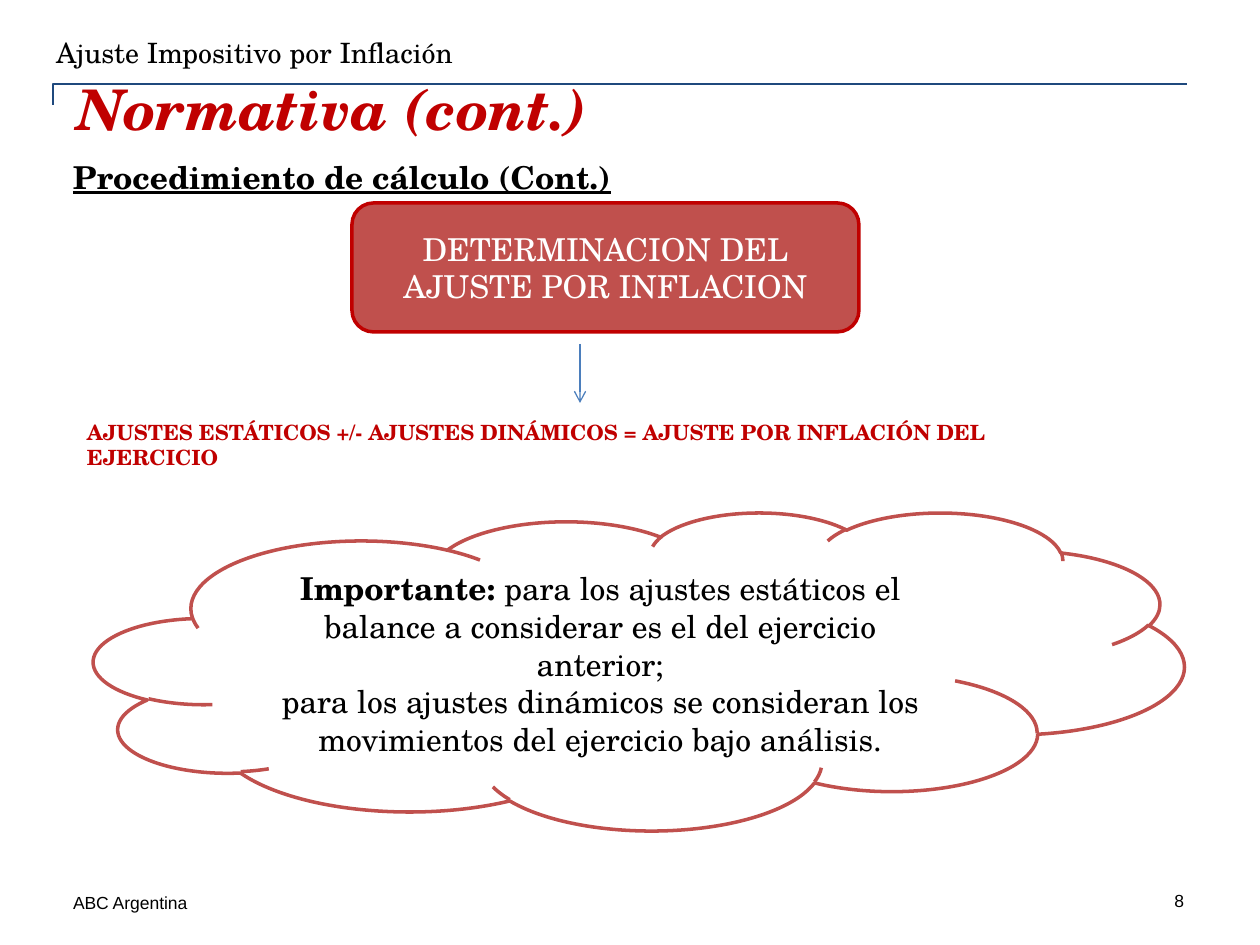
from lxml import etree
from pptx import Presentation
from pptx.dml.color import RGBColor
from pptx.enum import shapes, text
from pptx.oxml.ns import qn
from pptx.util import Emu, Pt

PX = 914400 / 126  # EMU in one px
SERIF, SANS = "TeX Gyre Schola", "Arial"
INSET = (13, 6, 13, 6)
COLOURS = {
    "black": "000000",
    "white": "FFFFFF",
    "red": "C00000",
    "brick": "C0504D",
    "navy": "1F497D",
    "blue": "4B7EBC",
}


def px(length):
    return Emu(round(length * PX))


def colour(name):
    return RGBColor.from_string(COLOURS[name])


def add_run(paragraph, words, size, name="black", font=SERIF, bold=False,
            italic=False, underline=False):
    run = paragraph.add_run()
    run.text = words
    run.font.name = font
    run.font.size = Pt(size)
    run.font.bold = bold
    run.font.italic = italic
    run.font.underline = underline
    run.font.color.rgb = colour(name)


def set_frame(shape, anchor=text.MSO_ANCHOR.TOP, align=text.PP_ALIGN.LEFT,
              inset=INSET, wrap=True):
    """Format the text frame and return its first paragraph."""
    frame = shape.text_frame
    frame.word_wrap = wrap
    frame.auto_size = text.MSO_AUTO_SIZE.NONE
    frame.vertical_anchor = anchor
    (frame.margin_left, frame.margin_top,
     frame.margin_right, frame.margin_bottom) = map(px, inset)
    paragraph = frame.paragraphs[0]
    paragraph.alignment = align
    return paragraph


def add_label(slide, box, words, size, name="black", font=SERIF, bold=False,
              underline=False, **frame):
    shape = slide.shapes.add_textbox(*map(px, box))
    add_run(set_frame(shape, **frame), words, size, name, font, bold,
            underline=underline)


def add_panel(slide, kind, box, fill, line):
    """Add an outlined shape and return its first, centred paragraph."""
    shape = slide.shapes.add_shape(kind, *map(px, box))
    shape.shadow.inherit = False
    shape.fill.solid()
    shape.fill.fore_color.rgb = colour(fill)
    shape.line.color.rgb = colour(line)
    shape.line.width = Pt(2)
    return set_frame(shape, text.MSO_ANCHOR.MIDDLE, text.PP_ALIGN.CENTER)


def add_header(slide, box):
    left, top, width, height = box
    add_label(slide, (left - 10, top, width + 8, 47),
              "Ajuste Impositivo por Inflación", 16)

    # Rule with a short drop at its left end
    rule_top = top + 54
    builder = slide.shapes.build_freeform(left, rule_top + 21, scale=PX)
    builder.add_line_segments(
        [(left, rule_top), (left + width, rule_top)], close=False)
    rule = builder.convert_to_shape()
    rule.shadow.inherit = False
    rule.fill.background()
    rule.line.color.rgb = colour("navy")
    rule.line.width = Pt(1)

    # Title
    title = slide.shapes.title
    title.left, title.top, title.width, title.height = map(
        px, (left + 25, top + 5, width - 25, height))
    paragraph = set_frame(title, text.MSO_ANCHOR.MIDDLE, inset=(0, 6, 0, 6))
    add_run(paragraph, "Normativa (cont.)", 32, "red", bold=True, italic=True)


def add_arrow(slide, x, top, bottom):
    arrow = slide.shapes.add_connector(
        shapes.MSO_CONNECTOR.STRAIGHT, *map(px, (x, top, x, bottom)))
    arrow.line.color.rgb = colour("blue")
    arrow.line.width = Pt(0.75)
    etree.SubElement(arrow.line._get_or_add_ln(), qn("a:tailEnd"), type="arrow")
    etree.SubElement(arrow._element.spPr, qn("a:effectLst"))


def add_procedure(slide, box):
    left, top, width, height = box
    add_label(slide, (left, top, 565, 50), "Procedimiento de cálculo (Cont.)",
              18, bold=True, underline=True, wrap=False)

    paragraph = add_panel(slide, shapes.MSO_SHAPE.ROUNDED_RECTANGLE,
                          (left + 292, top + 51, 507, 129), "brick", "red")
    add_run(paragraph, "DETERMINACION DEL AJUSTE POR INFLACION", 18, "white")

    add_arrow(slide, left + 520, top + 192, top + 251)

    add_label(slide, (left + 14, top + 261, width - 14, height - 261),
              "AJUSTES ESTÁTICOS +/- AJUSTES DINÁMICOS = "
              "AJUSTE POR INFLACIÓN DEL EJERCICIO", 12, "red", bold=True)


def add_note(slide, box):
    first = add_panel(slide, shapes.MSO_SHAPE.CLOUD, box, "white", "brick")
    add_run(first, "Importante:", 18, bold=True)
    add_run(first, " para los ajustes estáticos el balance a considerar es "
                   "el del ejercicio anterior;", 18)
    second = first._parent.add_paragraph()
    second.alignment = text.PP_ALIGN.CENTER
    add_run(second, "para los ajustes dinámicos se consideran los movimientos "
                    "del ejercicio bajo análisis.", 18)


def add_footer(slide, box):
    left, top, width, height = box
    add_label(slide, (left, top + 16, 357, 21), "ABC Argentina", 10,
              font=SANS, inset=(0, 0, 0, 0))
    add_label(slide, (left + width - 294, top, 294, height), "8", 10,
              font=SANS, anchor=text.MSO_ANCHOR.MIDDLE,
              align=text.PP_ALIGN.RIGHT)


def main():
    presentation = Presentation()
    presentation.slide_width, presentation.slide_height = px(1260), px(945)
    slide = presentation.slides.add_slide(presentation.slide_layouts[5])
    add_header(slide, (53, 30, 1134, 147))
    add_procedure(slide, (60, 152, 1062, 320))
    add_note(slide, (94, 512, 1090, 318))
    add_footer(slide, (73, 876, 1124, 50))
    presentation.save("out.pptx")


if __name__ == "__main__":
    main()
